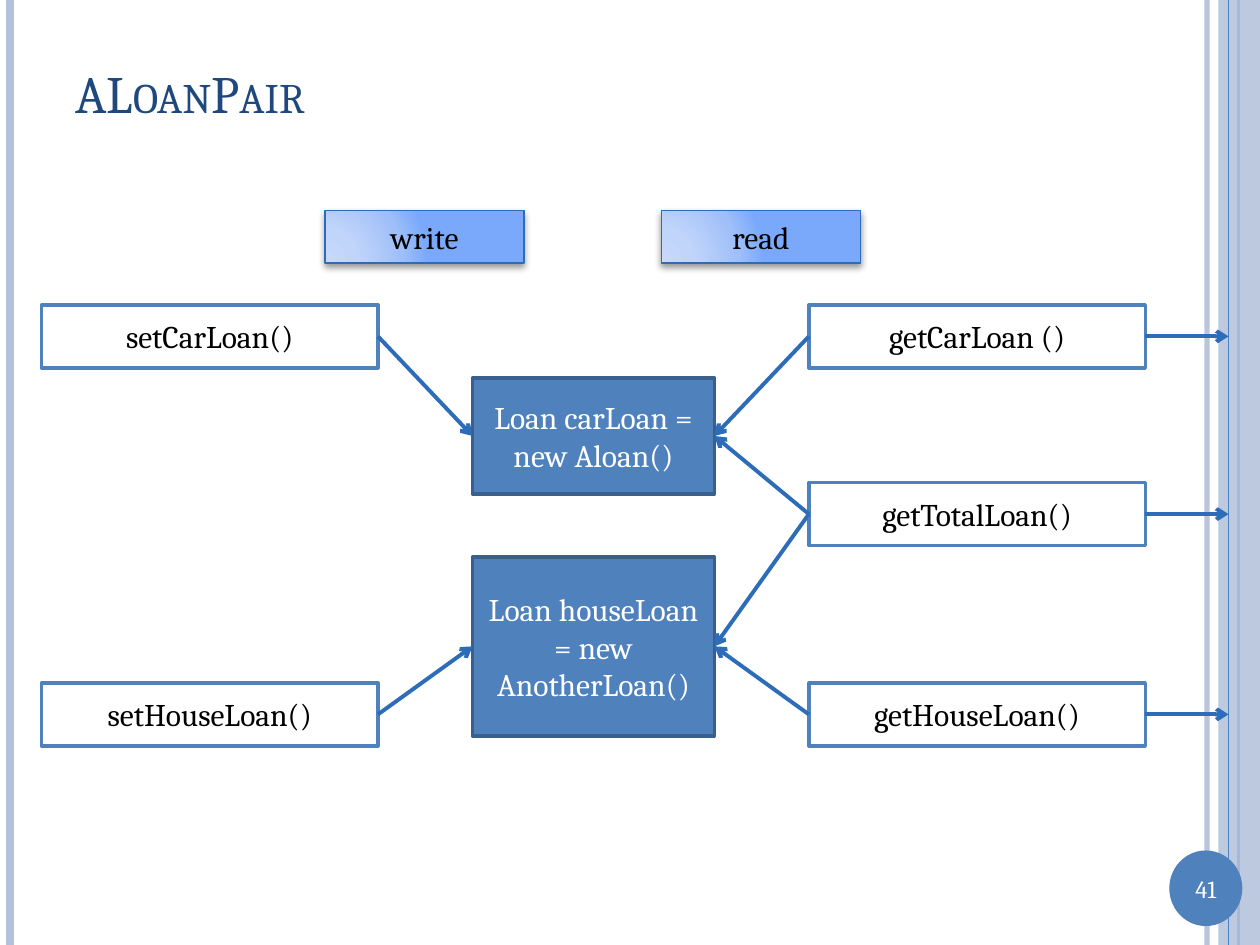
from dataclasses import dataclass

from lxml.etree import SubElement
from pptx import Presentation
from pptx.dml.color import RGBColor
from pptx.enum.shapes import MSO_CONNECTOR as Connector, MSO_SHAPE as Preset
from pptx.enum.text import MSO_ANCHOR as Anchor, PP_ALIGN as Align
from pptx.oxml import parse_xml
from pptx.oxml.ns import nsdecls, qn
from pptx.util import Inches, Pt

FONT = "Cambria"
WHITE = RGBColor(0xFF, 0xFF, 0xFF)
BLACK = RGBColor(0x00, 0x00, 0x00)
NAVY = RGBColor(0x1F, 0x49, 0x7D)
BLUE = RGBColor(0x4F, 0x81, 0xBD)
DARK_BLUE = RGBColor(0x3A, 0x5F, 0x8C)
ARROW_BLUE = RGBColor(0x2C, 0x6C, 0xB9)
PALE_BLUE = RGBColor(0xB3, 0xC1, 0xDB)
LABEL_STOPS = (
    (0, RGBColor(0xC7, 0xD8, 0xFB)),
    (30, RGBColor(0xC1, 0xD5, 0xFA)),
    (75, RGBColor(0x9F, 0xBF, 0xF9)),
    (100, RGBColor(0x7A, 0xA9, 0xFB)),
)


@dataclass(frozen=True)
class BoxStyle:
    fill: RGBColor
    line: RGBColor
    line_width: float
    font: RGBColor


@dataclass(frozen=True)
class Box:
    text: str
    left: float
    top: float
    width: float
    height: float
    style: BoxStyle

    @property
    def middle(self) -> float:
        return self.top + self.height / 2

    @property
    def left_end(self) -> tuple[float, float]:
        return self.left, self.middle

    @property
    def right_end(self) -> tuple[float, float]:
        return self.left + self.width, self.middle


@dataclass(frozen=True)
class Stripe:
    x: float
    color: RGBColor
    width: float
    opacity: int = 100


METHOD = BoxStyle(WHITE, BLUE, 2, BLACK)
OBJECT = BoxStyle(BLUE, DARK_BLUE, 2, WHITE)
LABEL = BoxStyle(LABEL_STOPS[-1][1], ARROW_BLUE, 1, BLACK)


def method_box(text: str, left: float, top: float) -> Box:
    return Box(text, left, top, 2.67, 0.5, METHOD)


def label_box(text: str, left: float) -> Box:
    return Box(text, left, 1.67, 1.58, 0.42, LABEL)


SETTER_LEFT, GETTER_LEFT = 0.33, 6.42
CAR_TOP, TOTAL_TOP, HOUSE_TOP = 2.42, 3.83, 5.42
OUTPUT_X = 9.75

set_car = method_box("setCarLoan()", SETTER_LEFT, CAR_TOP)
set_house = method_box("setHouseLoan()", SETTER_LEFT, HOUSE_TOP)
get_car = method_box("getCarLoan ()", GETTER_LEFT, CAR_TOP)
get_total = method_box("getTotalLoan()", GETTER_LEFT, TOTAL_TOP)
get_house = method_box("getHouseLoan()", GETTER_LEFT, HOUSE_TOP)
car_loan = Box("Loan carLoan = new Aloan()", 3.75, 3, 1.92, 0.92, OBJECT)
house_loan = Box("Loan houseLoan = new AnotherLoan()", 3.75, 4.42, 1.92, 1.42, OBJECT)
write_label = label_box("write", 3.75 - 1.17)
read_label = label_box("read", 5.25)

GETTERS = (get_car, get_total, get_house)
BOXES = (write_label, read_label, set_car, set_house, *GETTERS, car_loan, house_loan)
WRITES = ((set_car, car_loan), (set_house, house_loan))
READS = (
    (get_car, car_loan),
    (get_total, car_loan),
    (get_total, house_loan),
    (get_house, house_loan),
)


def set_opacity(element, percent: int) -> None:
    color = element.find(".//" + qn("a:srgbClr"))
    SubElement(color, qn("a:alpha"), val=str(percent * 1000))


def set_text(shape, text: str, size: float, color: RGBColor, align=Align.CENTER):
    text_frame = shape.text_frame
    text_frame.text = text
    text_frame.word_wrap = True
    text_frame.vertical_anchor = Anchor.MIDDLE
    paragraph = text_frame.paragraphs[0]
    paragraph.alignment = align
    run = paragraph.runs[0]
    run.font.name = FONT
    run.font.size = Pt(size)
    run.font.color.rgb = color
    return run


def add_text(slide, text: str, left: float, top: float, width: float, height: float,
             size: float, color: RGBColor, align=Align.CENTER):
    shape = slide.shapes.add_textbox(Inches(left), Inches(top), Inches(width), Inches(height))
    return set_text(shape, text, size, color, align)


def add_filled(slide, preset, left: float, top: float, width: float, height: float,
               color: RGBColor):
    shape = slide.shapes.add_shape(
        preset, Inches(left), Inches(top), Inches(width), Inches(height))
    shape.shadow.inherit = False
    shape.fill.solid()
    shape.fill.fore_color.rgb = color
    shape.line.fill.background()
    return shape


def add_line(slide, start: tuple[float, float], end: tuple[float, float],
             color: RGBColor, width: float):
    line = slide.shapes.add_connector(
        Connector.STRAIGHT, *(Inches(value) for value in (*start, *end)))
    line.line.color.rgb = color
    line.line.width = Pt(width)
    SubElement(line._element.spPr, qn("a:effectLst"))
    return line


def add_stripe(slide, stripe: Stripe) -> None:
    line = add_line(slide, (stripe.x, 0), (stripe.x, 7.5), stripe.color, stripe.width)
    if stripe.opacity < 100:
        set_opacity(line._element.spPr, stripe.opacity)


def add_arrow(slide, start: tuple[float, float], end: tuple[float, float]) -> None:
    arrow = add_line(slide, start, end, ARROW_BLUE, 2.25)
    SubElement(arrow.line._get_or_add_ln(), qn("a:tailEnd"), type="arrow")


def style_label(shape) -> None:
    properties = shape._element.spPr
    stops = "".join(
        f'<a:gs pos="{position * 1000}"><a:srgbClr val="{color}"/></a:gs>'
        for position, color in LABEL_STOPS)
    gradient = parse_xml(
        f'<a:gradFill {nsdecls("a")} rotWithShape="1"><a:gsLst>{stops}</a:gsLst>'
        '<a:path path="circle"><a:fillToRect l="5000" t="100000" r="120000" b="10000"/>'
        '</a:path></a:gradFill>')
    properties.replace(properties.find(qn("a:solidFill")), gradient)
    properties.find(qn("a:effectLst")).append(parse_xml(
        f'<a:outerShdw {nsdecls("a")} blurRad="{Pt(4)}" dist="{Pt(2)}" dir="5400000" '
        'rotWithShape="0"><a:srgbClr val="000000"><a:alpha val="40000"/></a:srgbClr>'
        '</a:outerShdw>'))


def add_box(slide, box: Box) -> None:
    style = box.style
    shape = add_filled(
        slide, Preset.RECTANGLE, box.left, box.top, box.width, box.height, style.fill)
    shape.line.color.rgb = style.line
    shape.line.width = Pt(style.line_width)
    set_text(shape, box.text, 18, style.font)
    if style is LABEL:
        style_label(shape)


def add_frame(slide) -> None:
    for stripe in (Stripe(9.58, PALE_BLUE, 3, 93), Stripe(0.08, PALE_BLUE, 4.5),
                   Stripe(9.83, BLUE, 1.5)):
        add_stripe(slide, stripe)
    band = add_filled(slide, Preset.RECTANGLE, 9.67, 0, 0.33, 7.5, PALE_BLUE)
    set_opacity(band._element.spPr, 87)
    add_stripe(slide, Stripe(9.75, BLUE, 0.75))
    add_filled(slide, Preset.OVAL, 9.28, 6.75, 0.58, 0.6, BLUE)
    add_text(slide, "41", 9.28, 6.88, 0.58, 0.34, 14, WHITE)


def main() -> None:
    presentation = Presentation()
    presentation.slide_width, presentation.slide_height = Inches(10), Inches(7.5)
    slide = presentation.slides.add_slide(presentation.slide_layouts[6])
    add_frame(slide)
    title = add_text(slide, "ALoanPair", 0.5, 0.3, 8.67, 0.87, 30, NAVY, Align.LEFT)
    title.font._element.set("cap", "small")
    for box in BOXES:
        add_box(slide, box)
    for setter, loan in WRITES:
        add_arrow(slide, setter.right_end, loan.left_end)
    for getter, loan in READS:
        add_arrow(slide, getter.left_end, loan.right_end)
    for getter in GETTERS:
        add_arrow(slide, getter.right_end, (OUTPUT_X, getter.middle))
    presentation.save("out.pptx")


if __name__ == "__main__":
    main()
